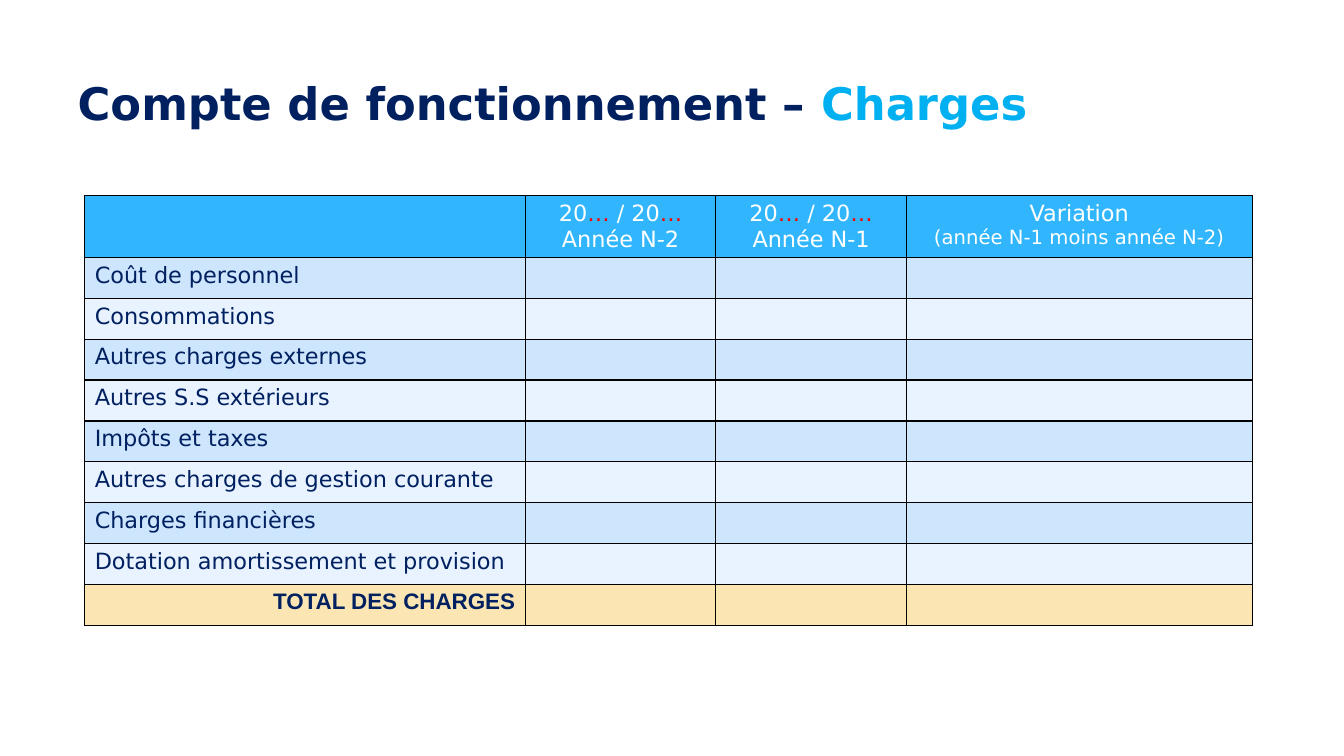
from pptx import Presentation
from pptx import util as u
from pptx.dml import color
from pptx.enum import text
from pptx.oxml import parse_xml
from pptx.oxml.ns import nsdecls

NAVY, CYAN, WHITE, RED = "002060", "00B0F0", "FFFFFF", "FF0000"
HEAD, DARK, LIGHT, GOLD = "31B6FD", "CEE5FE", "E8F3FF", "FBE6B3"
ALIGN = text.PP_ALIGN


def add_run(para, words, size, tint, bold=False, face="DejaVu Sans"):
    run = para.add_run()
    run.text = words
    font = run.font
    font.size, font.bold, font.name = u.Pt(size), bold, face
    font.color.rgb = color.RGBColor.from_string(tint)


def paint(cell, tint):
    cell.fill.solid()
    cell.fill.fore_color.rgb = color.RGBColor.from_string(tint)
    props = cell._tc.get_or_add_tcPr()
    for spot, side in enumerate(("lnL", "lnR", "lnT", "lnB")):
        props.insert(spot, parse_xml(
            f'<a:{side} {nsdecls("a")} w="12700"><a:solidFill>'
            f'<a:srgbClr val="000000"/></a:solidFill></a:{side}>'))


deck = Presentation()
deck.slide_width, deck.slide_height = u.Inches(13.33), u.Inches(7.5)
slide = deck.slides.add_slide(deck.slide_layouts[5])

title = slide.shapes.title
title.left, title.top = u.Inches(0.67), u.Inches(0.7)
title.width, title.height = u.Inches(10.57), u.Inches(0.87)
title.text_frame.vertical_anchor = text.MSO_ANCHOR.TOP
para = title.text_frame.paragraphs[0]
para.alignment = ALIGN.LEFT
add_run(para, "Compte de fonctionnement – ", 32, NAVY, True)
add_run(para, "Charges", 32, CYAN, True)

costs = ["Coût de personnel", "Consommations", "Autres charges externes",
         "Autres S.S extérieurs", "Impôts et taxes",
         "Autres charges de gestion courante", "Charges financières",
         "Dotation amortissement et provision"]
widths = [4.37, 1.89, 1.89, 3.43]
fills = [HEAD] + [DARK, LIGHT] * 4 + [GOLD]

grid = slide.shapes.add_table(
    len(fills), len(widths), u.Inches(0.84), u.Inches(1.94),
    u.Inches(sum(widths)), u.Inches(4.26)).table
for col, width in zip(grid.columns, widths):
    col.width = u.Inches(width)
for row, fill in zip(grid.rows, fills):
    row.height = u.Inches(0.61 if fill == HEAD else 3.65 / 9)
    for cell in row.cells:
        paint(cell, fill)
        cell.text_frame.paragraphs[0].font.size = u.Pt(16)

year = [("20", 16, WHITE), ("… ", 16, RED), ("/ 20", 16, WHITE), ("…", 16, RED)]
heads = [[year, [("Année N-2", 16, WHITE)]],
         [year, [("Année N-1", 16, WHITE)]],
         [[("Variation", 16, WHITE)],
          [("(année N-1 moins année N-2)", 14, WHITE)]]]
for col, lines in enumerate(heads, 1):
    frame = grid.cell(0, col).text_frame
    frame.add_paragraph()
    for para, runs in zip(frame.paragraphs, lines):
        para.alignment = ALIGN.CENTER
        for run in runs:
            add_run(para, *run)

for row, cost in enumerate(costs, 1):
    add_run(grid.cell(row, 0).text_frame.paragraphs[0], cost, 16, NAVY)

total = grid.cell(len(costs) + 1, 0).text_frame.paragraphs[0]
total.alignment = ALIGN.RIGHT
add_run(total, "TOTAL DES CHARGES", 16, NAVY, True, "Arial")

deck.save("out.pptx")
